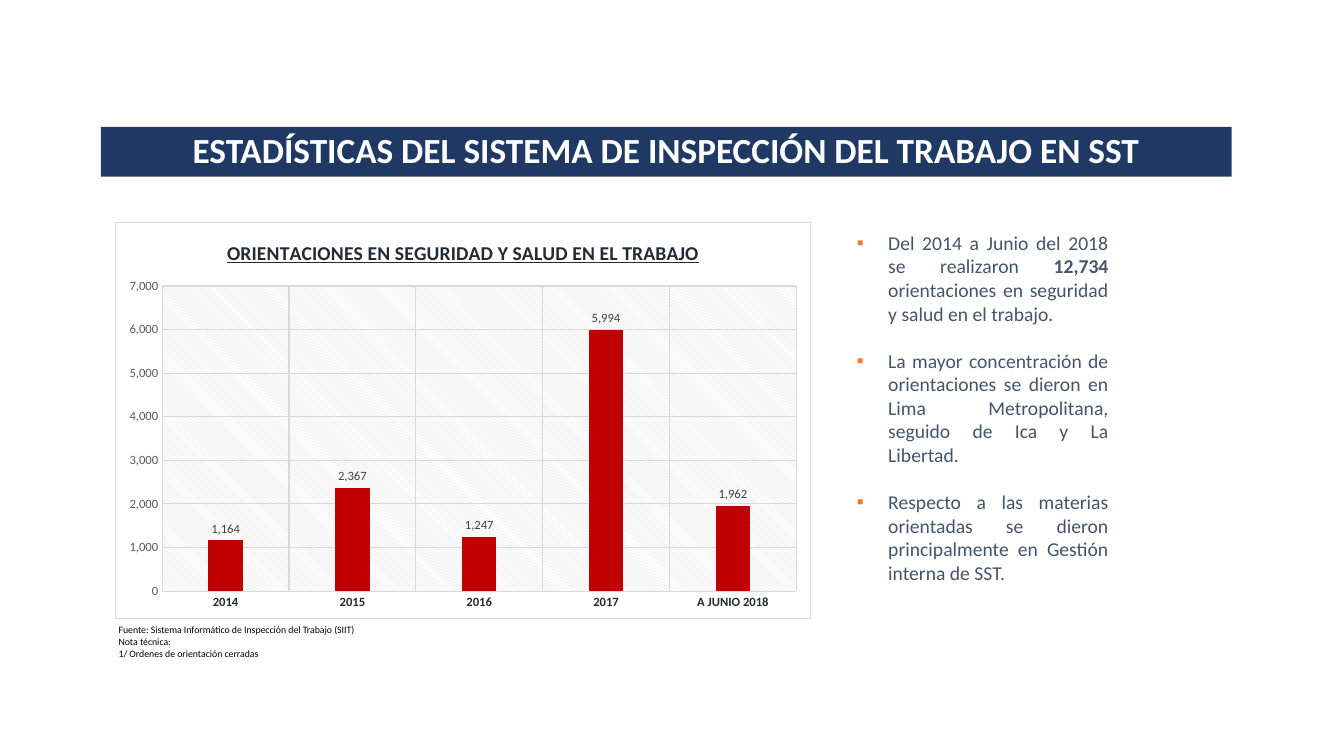
from dataclasses import dataclass

from lxml import etree
from pptx import Presentation
from pptx import util as u
from pptx.chart.data import CategoryChartData
from pptx.dml.color import RGBColor
from pptx.enum import chart as ch
from pptx.enum import text as t
from pptx.oxml import parse_xml
from pptx.oxml.ns import nsdecls, qn

NAVY = RGBColor(0x20, 0x38, 0x64)
WHITE = RGBColor(0xFF, 0xFF, 0xFF)
BLACK = RGBColor(0, 0, 0)
SLATE = RGBColor(0x44, 0x54, 0x6A)
ORANGE = RGBColor(0xED, 0x7D, 0x31)
RED = RGBColor(0xC0, 0, 0)
DARK = RGBColor(0x22, 0x2A, 0x35)
GRAY = RGBColor(0x59, 0x59, 0x59)
LABEL_GRAY = RGBColor(0x40, 0x40, 0x40)
GRID_GRAY = RGBColor(0xD9, 0xD9, 0xD9)
FONT = "Calibri"
CHART_TITLE = "ORIENTACIONES EN SEGURIDAD Y SALUD EN EL TRABAJO"
ORIENTATIONS = {"2014": 1164, "2015": 2367, "2016": 1247, "2017": 5994, "A JUNIO 2018": 1962}
SOURCE_LINES = [
    "Fuente: Sistema Informático de Inspección del Trabajo (SIIT)",
    "Nota técnica:",
    "1/ Ordenes de orientación cerradas",
]


@dataclass
class Box:
    left: float
    top: float
    width: float
    height: float

    def lengths(self) -> list:
        return [u.Cm(value) for value in (self.left, self.top, self.width, self.height)]


@dataclass
class Finding:
    before: str
    figure: str = ""
    after: str = ""


FINDINGS = [
    Finding("Del 2014 a Junio del 2018 se realizaron ", "12,734",
            " orientaciones en seguridad y salud en el trabajo."),
    Finding("La mayor concentración de orientaciones se dieron en Lima Metropolitana, "
            "seguido de Ica y La Libertad."),
    Finding("Respecto a las materias orientadas se dieron principalmente en Gestión "
            "interna de SST."),
]


def place(shape, box: Box) -> None:
    shape.left, shape.top, shape.width, shape.height = box.lengths()


def style(font, size: float, color: RGBColor, bold: bool = False) -> None:
    font.name, font.size, font.bold = FONT, u.Pt(size), bold
    font.color.rgb = color


def add_bullet(paragraph) -> None:
    """Give the paragraph an orange square with a hanging indent."""
    properties = paragraph._p.get_or_add_pPr()
    properties.set("marL", str(u.Cm(0.79)))
    properties.set("indent", str(-u.Cm(0.79)))
    color = etree.SubElement(properties, qn("a:buClr"))
    etree.SubElement(color, qn("a:srgbClr"), val=str(ORANGE))
    etree.SubElement(properties, qn("a:buFont"), typeface=FONT)
    etree.SubElement(properties, qn("a:buChar"), char="▪")


def fill_title(title) -> None:
    place(title, Box(2.54, 3.2, 28.5, 1.25))
    title.fill.solid()
    title.fill.fore_color.rgb = NAVY
    frame = title.text_frame
    frame.text = "ESTADÍSTICAS DEL SISTEMA DE INSPECCIÓN DEL TRABAJO EN SST"
    frame.auto_size = t.MSO_AUTO_SIZE.NONE
    frame.vertical_anchor = t.MSO_ANCHOR.MIDDLE
    paragraph = frame.paragraphs[0]
    paragraph.alignment = t.PP_ALIGN.CENTER
    paragraph.line_spacing = 0.9
    style(paragraph.runs[0].font, 25.2, WHITE, True)


def fill_findings(body) -> None:
    place(body, Box(21.34, 5.69, 6.85, 9.83))
    frame = body.text_frame
    frame.auto_size = t.MSO_AUTO_SIZE.NONE
    for index, finding in enumerate(FINDINGS):
        paragraph = frame.add_paragraph() if index else frame.paragraphs[0]
        paragraph.alignment = t.PP_ALIGN.JUSTIFY
        paragraph.line_spacing = 1.0
        paragraph.space_before = u.Pt(17 if index else 0)
        add_bullet(paragraph)
        for words in filter(None, (finding.before, finding.figure, finding.after)):
            run = paragraph.add_run()
            run.text = words
            style(run.font, 14, SLATE, words == finding.figure)


def add_source(slide) -> None:
    frame = slide.shapes.add_textbox(*Box(2.74, 15.6, 6.6, 1.14).lengths()).text_frame
    frame.word_wrap = False
    frame.text = "\n".join(SOURCE_LINES)
    for paragraph in frame.paragraphs:
        style(paragraph.runs[0].font, 7, BLACK)


def style_axis(axis, color: RGBColor, bold: bool) -> None:
    axis.has_major_gridlines = True
    axis.major_tick_mark = axis.minor_tick_mark = ch.XL_TICK_MARK.NONE
    line = axis.major_gridlines.format.line
    line.color.rgb, line.width = GRID_GRAY, u.Pt(0.75)
    style(axis.tick_labels.font, 9, color, bold)


def format_areas(chart) -> None:
    """Frame the chart, and set the place and hatching of its plot area."""
    space = chart._chartSpace
    space.find(qn("c:chart")).addnext(parse_xml(
        f'<c:spPr {nsdecls("c", "a")}><a:solidFill><a:srgbClr val="{WHITE}"/></a:solidFill>'
        f'<a:ln w="{u.Pt(0.75)}"><a:solidFill><a:srgbClr val="{GRID_GRAY}"/></a:solidFill>'
        '</a:ln></c:spPr>'))
    plot_area = space.find(f'{qn("c:chart")}/{qn("c:plotArea")}')
    for layout in plot_area.findall(qn("c:layout")):
        plot_area.remove(layout)
    plot_area.insert(0, parse_xml(
        f'<c:layout {nsdecls("c")}><c:manualLayout><c:layoutTarget val="inner"/>'
        '<c:xMode val="edge"/><c:yMode val="edge"/><c:x val="0.067"/><c:y val="0.161"/>'
        '<c:w val="0.912"/><c:h val="0.771"/></c:manualLayout></c:layout>'))
    plot_area.append(parse_xml(
        f'<c:spPr {nsdecls("c", "a")}><a:pattFill prst="ltDnDiag">'
        f'<a:fgClr><a:srgbClr val="{GRID_GRAY}"/></a:fgClr>'
        f'<a:bgClr><a:srgbClr val="{WHITE}"/></a:bgClr></a:pattFill>'
        '<a:ln><a:noFill/></a:ln></c:spPr>'))


def add_orientations_chart(slide) -> None:
    data = CategoryChartData(number_format="#,##0")
    data.categories = list(ORIENTATIONS)
    data.add_series(CHART_TITLE, list(ORIENTATIONS.values()))
    chart = slide.shapes.add_chart(
        ch.XL_CHART_TYPE.COLUMN_CLUSTERED, *Box(2.9, 5.59, 17.55, 10).lengths(), data).chart
    style(chart.font, 10, BLACK)
    chart.has_legend = False
    chart.has_title = True
    title = chart.chart_title
    title.include_in_layout = False
    title.text_frame.text = CHART_TITLE
    title_font = title.text_frame.paragraphs[0].runs[0].font
    style(title_font, 14, DARK, True)
    title_font.underline = True

    style_axis(chart.category_axis, DARK, True)
    axis_line = chart.category_axis.format.line
    axis_line.color.rgb, axis_line.width = GRID_GRAY, u.Pt(0.75)
    values = chart.value_axis
    style_axis(values, GRAY, False)
    values.format.line.fill.background()
    values.minimum_scale, values.maximum_scale, values.major_unit = 0, 7000, 1000
    values.tick_labels.number_format = "#,##0"
    values.tick_labels.number_format_is_linked = False

    plot = chart.plots[0]
    plot.gap_width, plot.overlap, plot.vary_by_categories = 267, -43, False
    series = plot.series[0]
    series.format.fill.solid()
    series.format.fill.fore_color.rgb = RED
    labels = series.data_labels
    labels.show_value = True
    labels.number_format, labels.number_format_is_linked = "#,##0", False
    labels.position = ch.XL_LABEL_POSITION.OUTSIDE_END
    style(labels.font, 9, LABEL_GRAY)
    format_areas(chart)


def main() -> None:
    presentation = Presentation()
    presentation.slide_width, presentation.slide_height = u.Cm(33.87), u.Cm(19.05)
    slide = presentation.slides.add_slide(presentation.slide_layouts[1])
    fill_title(slide.shapes.title)
    add_source(slide)
    fill_findings(slide.placeholders[1])
    add_orientations_chart(slide)
    presentation.save("out.pptx")


if __name__ == "__main__":
    main()
